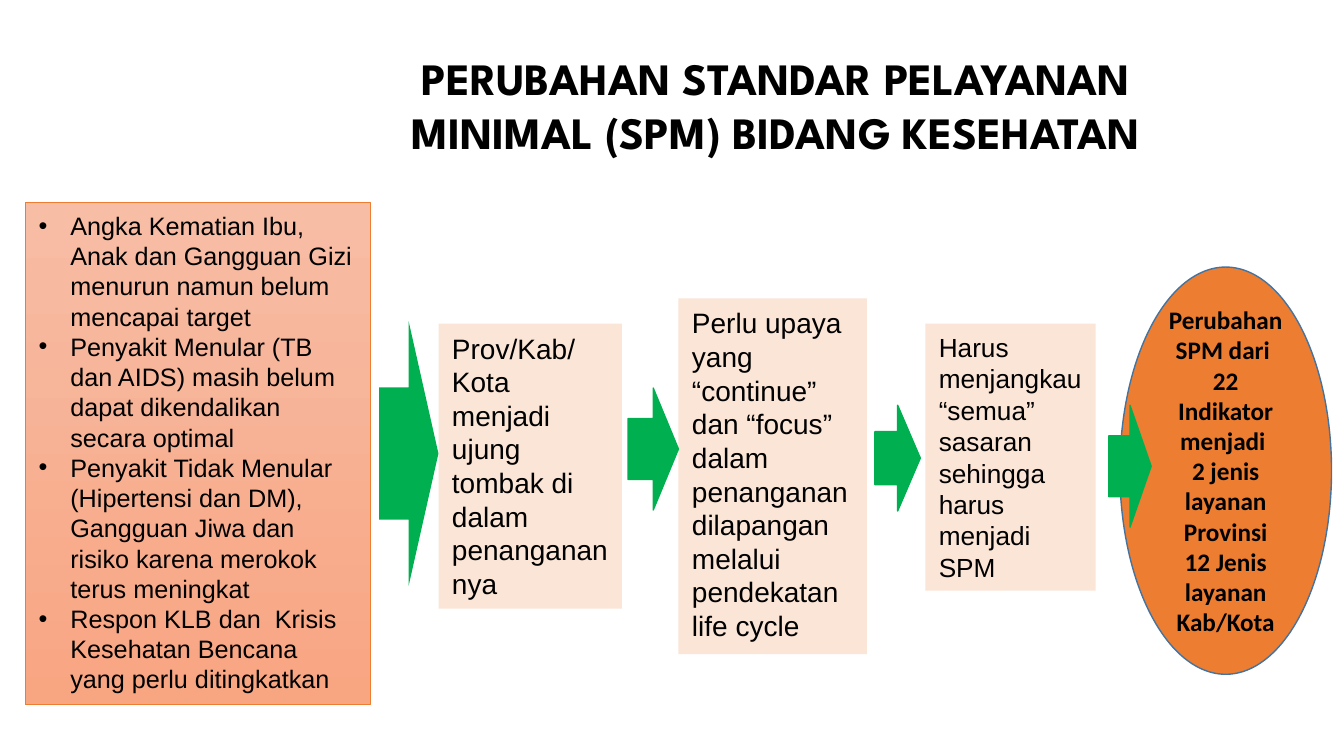
from collections import namedtuple

from lxml import etree
from pptx import Presentation
from pptx import util as u
from pptx.dml.color import RGBColor
from pptx.enum import shapes, text
from pptx.oxml.ns import qn

BLACK = RGBColor(0x00, 0x00, 0x00)
GREEN = RGBColor(0x00, 0xB0, 0x50)
ORANGE = RGBColor(0xED, 0x7D, 0x31)
CREAM = RGBColor(0xFB, 0xE5, 0xD6)
BLUE = RGBColor(0x43, 0x73, 0x9E)
SALMON_TOP = RGBColor(0xF7, 0xBD, 0xA5)
SALMON_BOTTOM = RGBColor(0xF8, 0xA5, 0x82)

SLIDE_W, SLIDE_H = u.Inches(13.33), u.Inches(7.5)
PAD_X, PAD_Y = SLIDE_W * 0.01, SLIDE_H * 0.01
BULLET_INDENT = int(SLIDE_W * 0.0235)

Box = namedtuple("Box", "left top width height")

TITLE = "PERUBAHAN STANDAR PELAYANAN MINIMAL (SPM) BIDANG KESEHATAN"
CAUSES = [
    "Angka Kematian Ibu, Anak dan Gangguan Gizi menurun namun belum mencapai target",
    "Penyakit Menular (TB dan AIDS) masih belum dapat dikendalikan secara optimal",
    "Penyakit Tidak Menular (Hipertensi dan DM), Gangguan Jiwa dan risiko karena merokok terus meningkat",
    "Respon KLB dan  Krisis Kesehatan Bencana yang perlu ditingkatkan",
]
STEPS = [
    (Box(32.63, 42.8, 13.65, 37.73), 20,
     ["Prov/Kab/", "Kota menjadi ujung tombak di dalam penanganannya"]),
    (Box(50.48, 39.47, 14.02, 47.07), 20,
     ["Perlu upaya yang “continue” dan “focus” dalam penanganan dilapangan  melalui pendekatan life cycle"]),
    (Box(68.85, 42.8, 12.67, 35.33), 18.7,
     ["Harus menjangkau “semua” sasaran sehingga harus menjadi SPM"]),
]
RESULT = [
    "Perubahan SPM dari ",
    "22 Indikator menjadi ",
    "2 jenis layanan Provinsi",
    "12 Jenis layanan Kab/Kota",
]
ARROWS = [
    (Box(28.2, 42.53, 4.42, 34.93), False),
    (Box(82.5, 53.6, 3.15, 16.13), True),
    (Box(46.73, 51.33, 3.75, 16.13), True),
    (Box(65.1, 53.6, 3.38, 14), True),
]


def place(box):
    """Turn a box in percent of the slide into left, top, width and height."""
    return [int(share * side / 100)
            for share, side in zip(box, (SLIDE_W, SLIDE_H) * 2)]


def add_shape(s, kind, box, fill=None, line=None, line_pt=1):
    """Add a flat preset shape with the given fill and outline."""
    sp = s.shapes.add_shape(kind, *place(box))
    sp.shadow.inherit = False
    if fill is not None:
        sp.fill.solid()
        sp.fill.fore_color.rgb = fill
    if line is None:
        sp.line.fill.background()
    else:
        sp.line.color.rgb = line
        sp.line.width = u.Pt(line_pt)
    return sp


def write(sp, lines, size, font="Arial", bold=False, centred=False, grow=False):
    """Write one paragraph per line and format its run."""
    tf = sp.text_frame
    tf.word_wrap = True
    tf.margin_left = tf.margin_right = int(PAD_X)
    tf.margin_top = tf.margin_bottom = int(PAD_Y)
    tf.vertical_anchor = text.MSO_ANCHOR.MIDDLE if centred else text.MSO_ANCHOR.TOP
    tf.auto_size = (text.MSO_AUTO_SIZE.SHAPE_TO_FIT_TEXT if grow
                    else text.MSO_AUTO_SIZE.NONE)
    tf.text = "\n".join(lines)
    for p in tf.paragraphs:
        p.alignment = text.PP_ALIGN.CENTER if centred else text.PP_ALIGN.LEFT
        for r in p.runs:
            r.font.name = font
            r.font.size = u.Pt(size)
            r.font.bold = bold
            r.font.color.rgb = BLACK


def add_bullets(tf):
    """Give every paragraph a hanging round bullet."""
    for p in tf.paragraphs:
        pPr = p._p.get_or_add_pPr()
        pPr.set("marL", str(BULLET_INDENT))
        pPr.set("indent", str(-BULLET_INDENT))
        etree.SubElement(pPr, qn("a:buFont")).set("typeface", "Arial")
        etree.SubElement(pPr, qn("a:buChar")).set("char", "•")


def draw_title(s, box):
    """Draw the centred heading."""
    sp = s.shapes.add_textbox(*place(box))
    write(sp, [TITLE], 32, "League Spartan", bold=True, centred=True)


def draw_causes(s, box):
    """Draw the shaded panel with the bulleted health problems."""
    sp = add_shape(s, shapes.MSO_SHAPE.RECTANGLE, box, line=ORANGE, line_pt=0.5)
    sp.fill.gradient()
    sp.fill.gradient_angle = 270
    for stop, color in zip(sp.fill.gradient_stops, (SALMON_TOP, SALMON_BOTTOM)):
        stop.color.rgb = color
    write(sp, CAUSES, 18, grow=True)
    add_bullets(sp.text_frame)


def draw_step(s, box, size, lines):
    """Draw one cream step of the flow."""
    sp = add_shape(s, shapes.MSO_SHAPE.RECTANGLE, box, CREAM)
    write(sp, lines, size, grow=True)


def draw_result(s, box):
    """Draw the ellipse with the resulting change."""
    sp = add_shape(s, shapes.MSO_SHAPE.OVAL, box, ORANGE, BLUE)
    write(sp, RESULT, 18, "Calibri", bold=True, centred=True)


def draw_arrow(s, box, outlined):
    """Draw a green arrow pointing to the next part of the flow."""
    add_shape(s, shapes.MSO_SHAPE.RIGHT_ARROW, box, GREEN, GREEN if outlined else None)


def main():
    """Build the slide and save it."""
    prs = Presentation()
    prs.slide_width, prs.slide_height = SLIDE_W, SLIDE_H
    s = prs.slides.add_slide(prs.slide_layouts[6])
    draw_causes(s, Box(1.88, 26.8, 25.65, 66.4))
    for step in STEPS:
        draw_step(s, *step)
    draw_result(s, Box(83.32, 35.33, 15.75, 53.87))
    for arrow in ARROWS:
        draw_arrow(s, *arrow)
    draw_title(s, Box(25.8, 7.6, 63.9, 12.53))
    prs.save("out.pptx")


if __name__ == "__main__":
    main()
